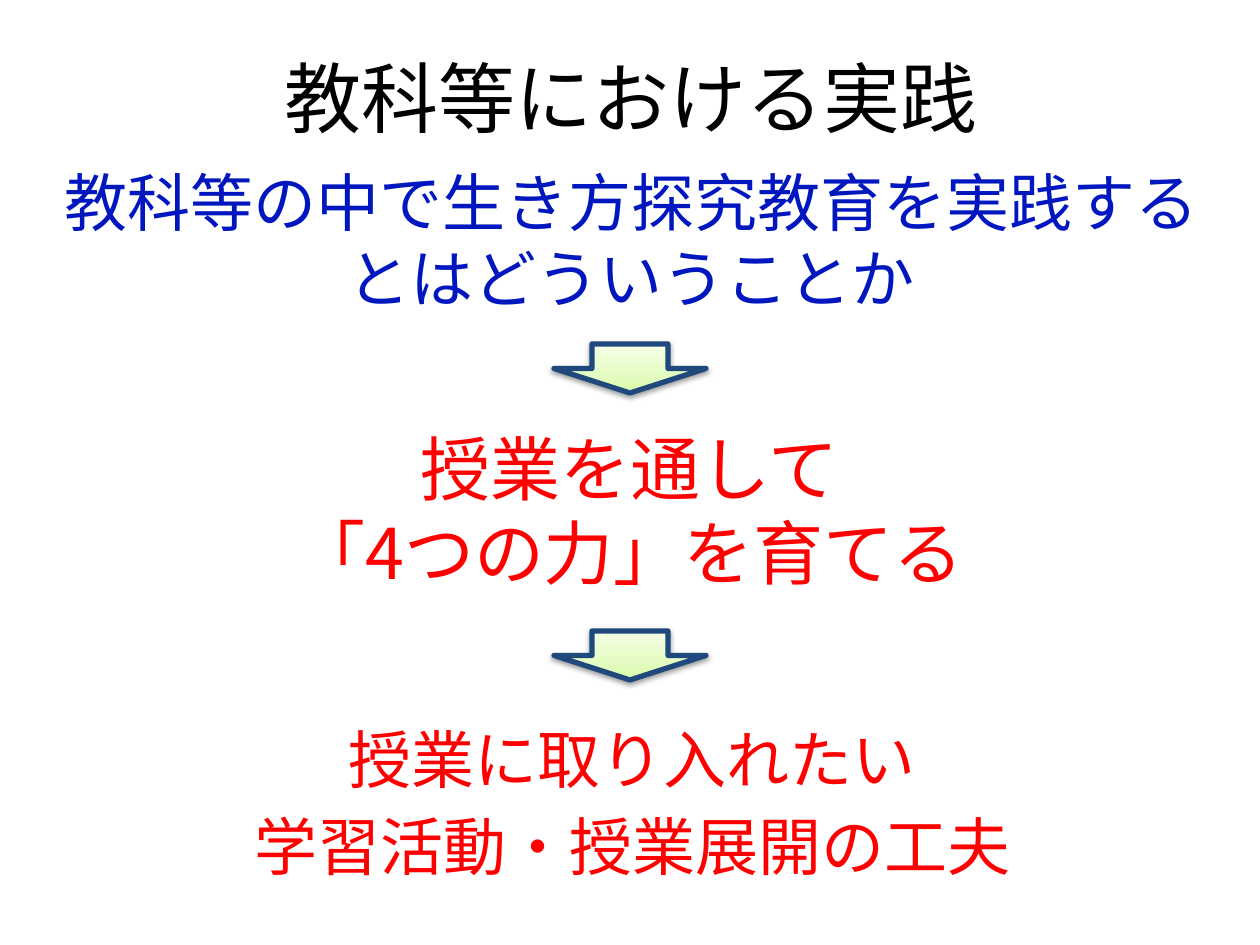
import dataclasses
import typing

import lxml.etree
import pptx
import pptx.dml.color
import pptx.enum.shapes
import pptx.enum.text
import pptx.oxml
import pptx.oxml.ns
import pptx.util

EMU_PER_PX = 914400 / 126
COLORS = {
    "title": "000000", "question": "0017C0", "answer": "FF0000", "panel": "FFFFFF",
    "arrow_line": "1F497D", "arrow_low": "DAFDA7", "arrow_mid": "E4FCC2",
    "arrow_top": "F5FFE7", "shadow": "000000",
}
JAPANESE_FONT = "Noto Sans CJK JP"
ANCHOR = pptx.enum.text.MSO_ANCHOR
SHAPE = pptx.enum.shapes.MSO_SHAPE
NAMESPACE = pptx.oxml.ns.nsdecls("a")


@dataclasses.dataclass
class Area:
    left: int
    top: int
    width: int
    height: int


@dataclasses.dataclass
class Message:
    area: Area
    text: str
    size: int
    color: str


MESSAGES = [
    Message(Area(35, 145, 1192, 189),
            "教科等の中で生き方探究教育を実践する\vとはどういうことか", 36, "question"),
    Message(Area(118, 423, 1023, 173), "授業を通して\n「4つの力」を育てる", 40, "answer"),
]
CONCLUSION = Message(Area(120, 721, 1021, 179),
                     "授業に取り入れたい\n学習活動・授業展開の工夫", 36, "answer")
ARROWS = [Area(554, top, 152, 49) for top in (344, 631)]


def px(length: int) -> int:
    return pptx.util.Emu(round(length * EMU_PER_PX))


def bounds(area: Area) -> typing.Tuple[int, ...]:
    return tuple(px(length) for length in dataclasses.astuple(area))


def rgb(name: str) -> pptx.dml.color.RGBColor:
    return pptx.dml.color.RGBColor.from_string(COLORS[name])


def write(box, message: Message, font: str, anchor=ANCHOR.MIDDLE) -> None:
    frame = box.text_frame
    frame.text = message.text
    frame.word_wrap = True
    frame.auto_size = pptx.enum.text.MSO_AUTO_SIZE.NONE
    frame.vertical_anchor = anchor
    for para in frame.paragraphs:
        para.alignment = pptx.enum.text.PP_ALIGN.CENTER
        for span in para.runs:
            span.font.size = pptx.util.Pt(message.size)
            span.font.name = font
            span.font.color.rgb = rgb(message.color)
            # East Asian glyphs take their own typeface
            east_asian = lxml.etree.SubElement(
                span.font._element, pptx.oxml.ns.qn("a:ea"))
            east_asian.set("typeface", JAPANESE_FONT)


def add_message(page, message: Message) -> None:
    write(page.shapes.add_textbox(*bounds(message.area)), message, JAPANESE_FONT)


def add_panel(page, message: Message) -> None:
    box = page.shapes.add_shape(SHAPE.RECTANGLE, *bounds(message.area))
    box.shadow.inherit = False
    box.fill.solid()
    box.fill.fore_color.rgb = rgb("panel")
    box.line.fill.background()
    write(box, message, JAPANESE_FONT, ANCHOR.TOP)
    box.text_frame.margin_top = 0
    for para in box.text_frame.paragraphs:
        para.space_before = pptx.util.Pt(6)
        para._p.get_or_add_pPr().set("marL", str(pptx.util.Inches(0.03)))


def add_arrow(page, area: Area) -> None:
    arrow = page.shapes.add_shape(SHAPE.DOWN_ARROW, *bounds(area))
    arrow.shadow.inherit = False
    arrow.line.color.rgb = rgb("arrow_line")
    arrow.line.width = pptx.util.Pt(3)
    # Three-stop gradient running upwards
    stops = "".join(
        f'<a:gs pos="{position * 1000}"><a:srgbClr val="{COLORS[name]}"/></a:gs>'
        for position, name in ((0, "arrow_low"), (35, "arrow_mid"), (100, "arrow_top")))
    gradient = pptx.oxml.parse_xml(
        f'<a:gradFill {NAMESPACE} rotWithShape="1"><a:gsLst>{stops}</a:gsLst>'
        '<a:lin ang="16200000" scaled="0"/></a:gradFill>')
    properties = arrow._element.spPr
    properties.find(pptx.oxml.ns.qn("a:prstGeom")).addnext(gradient)
    # Soft shadow below
    properties.find(pptx.oxml.ns.qn("a:effectLst")).append(pptx.oxml.parse_xml(
        f'<a:outerShdw {NAMESPACE} blurRad="40000" dist="20000" dir="5400000" '
        f'rotWithShape="0"><a:srgbClr val="{COLORS["shadow"]}">'
        '<a:alpha val="38000"/></a:srgbClr></a:outerShdw>'))


def main() -> None:
    deck = pptx.Presentation()
    deck.slide_width, deck.slide_height = px(1260), px(945)
    page = deck.slides.add_slide(deck.slide_layouts.get_by_name("Title Only"))

    # Title
    heading = Message(Area(64, 38, 1134, 117), "教科等における実践", 44, "title")
    title = page.shapes.title
    title.left, title.top, title.width, title.height = bounds(heading.area)
    write(title, heading, "Calibri")

    # Question, goal and conclusion, joined by arrows
    for message, arrow in zip(MESSAGES, ARROWS):
        add_message(page, message)
        add_arrow(page, arrow)
    add_panel(page, CONCLUSION)

    deck.save("out.pptx")


if __name__ == "__main__":
    main()
